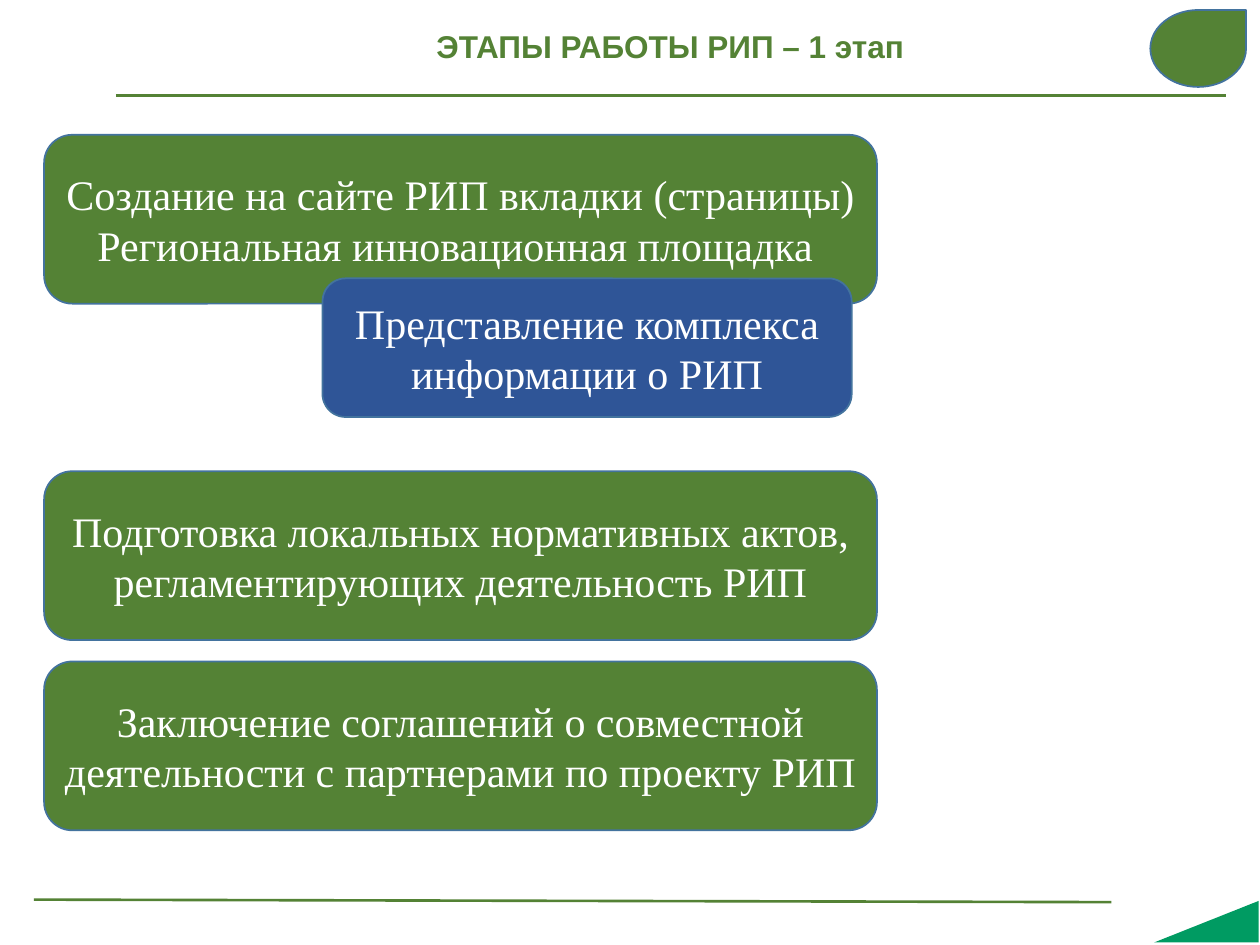
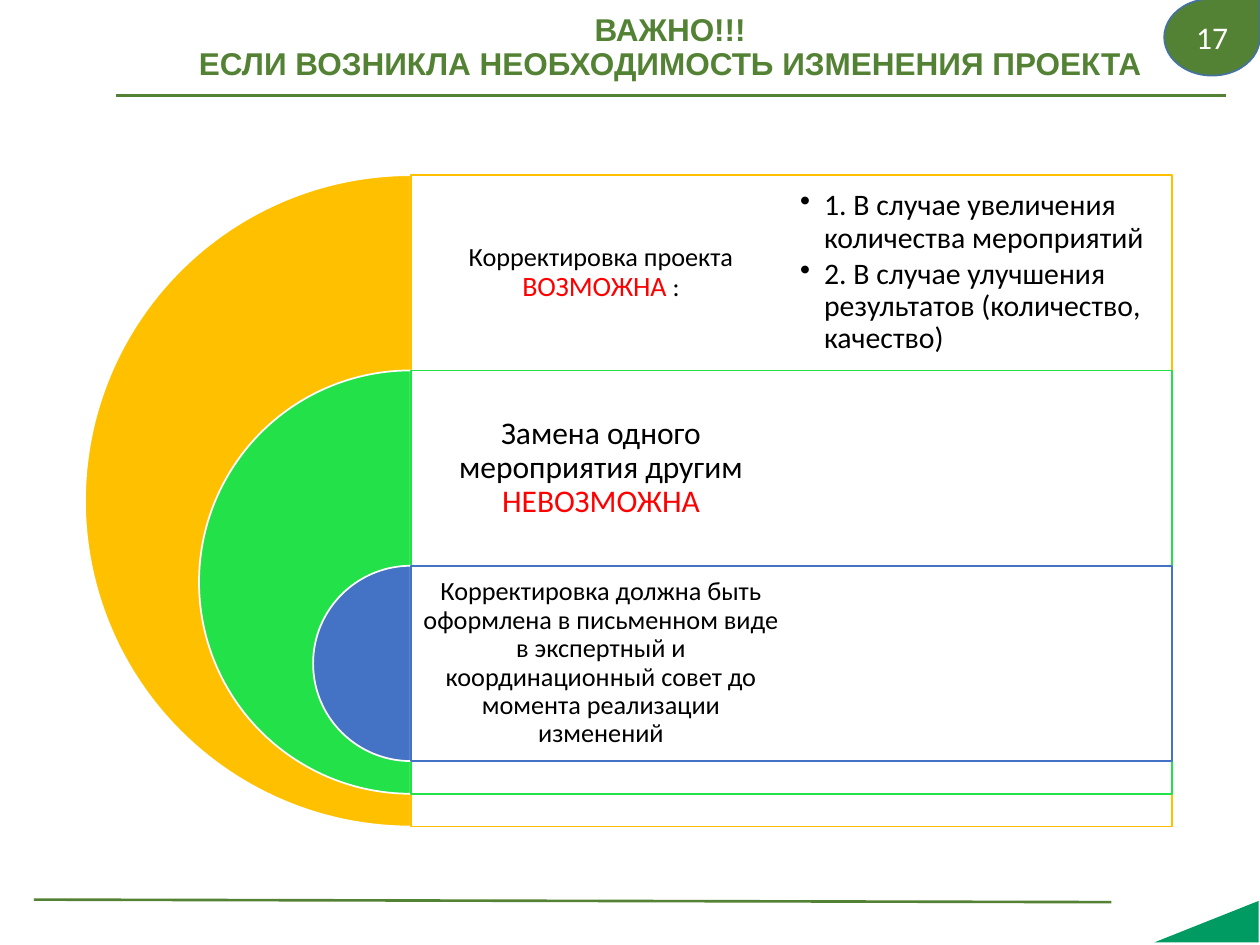
import pptx
import pptx.dml.color
import pptx.enum.shapes
import pptx.enum.text
import pptx.oxml.ns
import pptx.util
from lxml import etree

Inches = pptx.util.Inches
Pt = pptx.util.Pt
SHAPES = pptx.enum.shapes.MSO_SHAPE
ALIGN = pptx.enum.text.PP_ALIGN
qn = pptx.oxml.ns.qn

COLOURS = {
    "green": "548235", "outline": "43739E", "corner": "009B62",
    "navy": "2F5597", "white": "FFFFFF", "black": "000000",
    "red": "FF0000", "amber": "FFC000", "lime": "23E148", "blue": "4472C4",
}


class Deck:
    """Holds the shared style and the slide being built."""

    def __init__(self):
        self.presentation = pptx.Presentation()
        self.presentation.slide_width = Inches(10)
        self.presentation.slide_height = Inches(7.5)
        self.slide = None

    def colour(self, name):
        return pptx.dml.color.RGBColor.from_string(COLOURS[name])

    def new_slide(self, title):
        layout = self.presentation.slide_layouts[6]
        self.slide = self.presentation.slides.add_slide(layout)
        self.line(0.92, 0.76, 9.73, 0.76)
        self.line(0.27, 7.14, 8.82, 7.16)
        corner = self.shape(SHAPES.RIGHT_TRIANGLE, (9.41, 6.9, 0.33, 0.83), "corner", None)
        corner.rotation = 270
        self.text_box((0.8, 0.05, 9.04, 0.67), [[(title, 18, "green")]],
                      font="Arial", bold=True, inset=0.05)

    def line(self, x1, y1, x2, y2):
        connector = self.slide.shapes.add_connector(
            pptx.enum.shapes.MSO_CONNECTOR.STRAIGHT,
            Inches(x1), Inches(y1), Inches(x2), Inches(y2))
        connector.line.color.rgb = self.colour("green")
        connector.line.width = Pt(1.5)
        etree.SubElement(connector._element.spPr, qn("a:effectLst"))

    def shape(self, kind, box, fill, outline="outline", opacity=100):
        shape = self.slide.shapes.add_shape(kind, *map(Inches, box))
        shape.shadow.inherit = False
        shape.fill.solid()
        shape.fill.fore_color.rgb = self.colour(fill)
        if opacity < 100:
            colour = shape._element.spPr.find(qn("a:solidFill"))[0]
            etree.SubElement(colour, qn("a:alpha"), val=str(opacity * 1000))
        if outline:
            shape.line.color.rgb = self.colour(outline)
            shape.line.width = Pt(1)
        else:
            shape.line.fill.background()
        return shape

    def fill_text(self, text_frame, paragraphs, font, bold=False, spacing=None, bullets=False):
        text_frame.word_wrap = True
        text_frame.vertical_anchor = pptx.enum.text.MSO_ANCHOR.MIDDLE
        for index, pieces in enumerate(paragraphs):
            paragraph = text_frame.paragraphs[0] if index == 0 else text_frame.add_paragraph()
            paragraph.alignment = ALIGN.LEFT if bullets else ALIGN.CENTER
            if spacing:
                paragraph.line_spacing = spacing
            if bullets:
                self.bullet(paragraph)
            for text, size, colour in pieces:
                first, *rest = text.split("\n")
                runs = [paragraph.add_run()]
                runs[0].text = first
                for part in rest:
                    paragraph.add_line_break()
                    runs.append(paragraph.add_run())
                    runs[-1].text = part
                for run in runs:
                    run.font.name = font
                    run.font.size = Pt(size)
                    run.font.bold = bold
                    run.font.color.rgb = self.colour(colour)

    def bullet(self, paragraph):
        paragraph.level = 1
        paragraph.space_after = Pt(2.5)
        properties = paragraph._p.get_or_add_pPr()
        properties.set("marL", str(Inches(0.19)))
        properties.set("indent", str(-Inches(0.19)))
        etree.SubElement(properties, qn("a:buChar"), char="•")

    def text_box(self, box, paragraphs, font="Calibri", bold=False, inset=0.06, bullets=False):
        text_frame = self.slide.shapes.add_textbox(*map(Inches, box)).text_frame
        text_frame.margin_left = text_frame.margin_right = Inches(inset)
        text_frame.margin_top = text_frame.margin_bottom = Inches(inset)
        self.fill_text(text_frame, paragraphs, font, bold, 0.9, bullets)

    def card(self, box, fill, lines):
        shape = self.shape(SHAPES.ROUNDED_RECTANGLE, box, fill)
        self.fill_text(shape.text_frame, [[(line, 24, "white")] for line in lines],
                       "Times New Roman")

    def badge(self, left, top, number=None):
        shape = self.shape(SHAPES.TEAR, (left, top, 0.76, 0.61), "green")
        if number:
            self.fill_text(shape.text_frame, [[(number, 18, "white")]], "Calibri")

    def ring(self, centre, top, diameter, width, colour):
        pie = self.shape(SHAPES.PIE, (centre - diameter / 2, top, diameter, diameter),
                         colour, "white")
        pie.adjustments[0] = 54
        pie.adjustments[1] = 162
        self.shape(SHAPES.RECTANGLE, (centre, top, width, diameter), "white", colour, 90)


def build_stages(deck):
    deck.new_slide("ЭТАПЫ РАБОТЫ РИП – 1 этап")
    deck.card((0.35, 1.07, 6.61, 1.34), "green",
              ["Создание на сайте РИП вкладки (страницы) ",
               "Региональная инновационная площадка "])
    deck.card((2.56, 2.21, 4.2, 1.1), "navy", ["Представление комплекса информации о РИП"])
    deck.card((0.35, 3.74, 6.61, 1.34), "green",
              ["Подготовка локальных нормативных актов,", "регламентирующих деятельность РИП"])
    deck.card((0.35, 5.25, 6.61, 1.34), "green",
              ["Заключение соглашений о совместной деятельности с партнерами по проекту РИП"])
    deck.badge(9.13, 0.08)


def build_changes(deck):
    deck.new_slide("ВАЖНО!!!\nЕСЛИ ВОЗНИКЛА НЕОБХОДИМОСТЬ ИЗМЕНЕНИЯ ПРОЕКТА")
    centre, first_top, row_height, column = 3.26, 1.39, 1.55, 3.02
    rules = [
        ("amber", [("Корректировка проекта ", 15, "black"), ("ВОЗМОЖНА", 16, "red"),
                   (" :", 15, "black")]),
        ("lime", [("Замена одного мероприятия другим ", 18, "black"),
                  ("НЕВОЗМОЖНА", 18, "red")]),
        ("blue", [("Корректировка должна быть оформлена в письменном виде в экспертный и "
                   "координационный совет до момента реализации изменений", 15, "black")]),
    ]
    for index, (colour, pieces) in enumerate(rules):
        top = first_top + index * row_height
        deck.ring(centre, top, 5.17 - index * 1.81, 2 * column, colour)
        deck.text_box((centre, top, column, row_height), [pieces])
    cases = ["1. В случае увеличения количества мероприятий",
             "2. В случае улучшения результатов (количество, качество)"]
    deck.text_box((centre + column, first_top, column, row_height),
                  [[(case, 17, "black")] for case in cases], inset=0.07, bullets=True)
    deck.badge(9.24, -0.01, "17")


def main():
    deck = Deck()
    build_stages(deck)
    build_changes(deck)
    deck.presentation.save("out.pptx")


if __name__ == "__main__":
    main()
